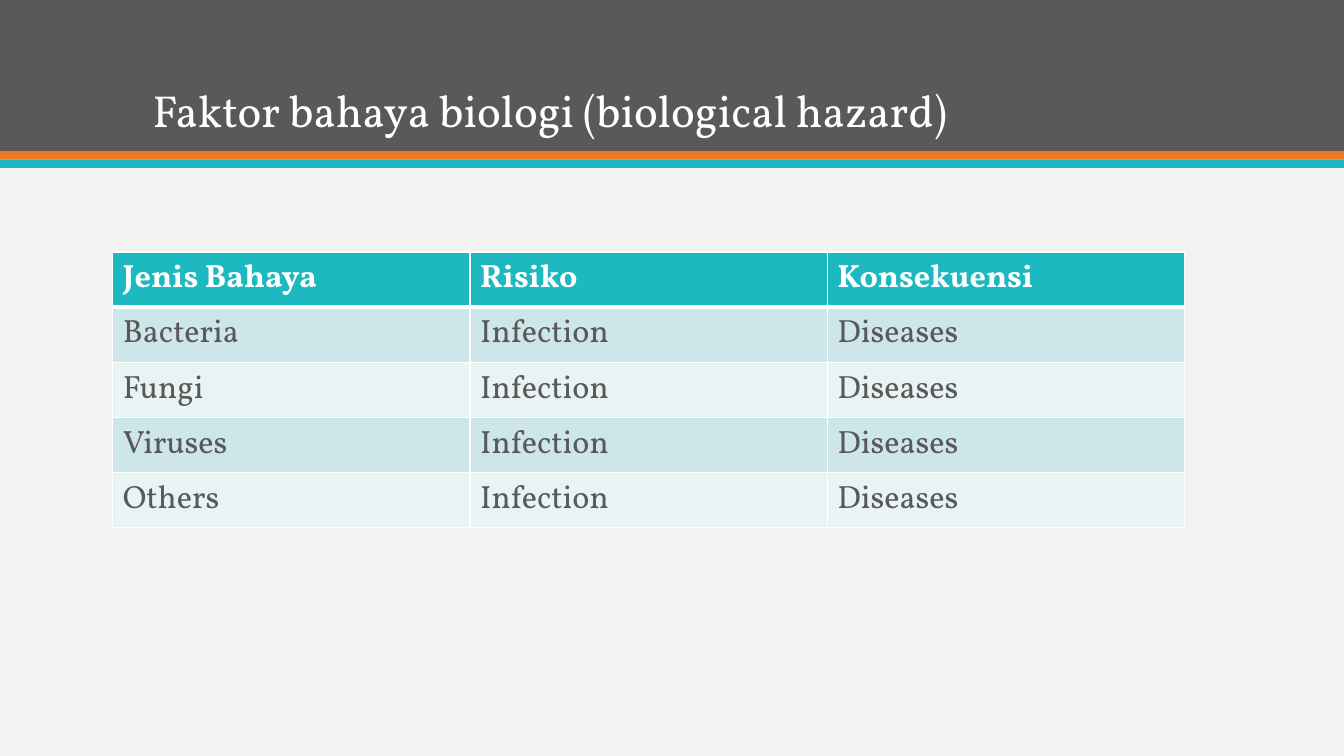
from dataclasses import dataclass

from lxml.etree import SubElement
from pptx import Presentation
from pptx.dml.color import RGBColor
from pptx.enum.shapes import MSO_SHAPE
from pptx.enum.text import MSO_ANCHOR
from pptx.oxml.ns import qn
from pptx.util import Pt


@dataclass(frozen=True)
class Theme:
    font: str = "Vollkorn"
    title_size: int = 32
    table_size: int = 23
    page: str = "F2F2F2"
    dark: str = "595959"
    orange: str = "EF7920"
    teal: str = "1EB8C1"
    white: str = "FFFFFF"
    bands: tuple = ("CDE6E9", "E8F3F4")


class Deck:
    """Builds slide elements in one theme, with lengths in points."""

    def __init__(self, theme, width, height):
        self.t = theme
        self.prs = Presentation()
        self.prs.slide_width, self.prs.slide_height = Pt(width), Pt(height)
        self.s = self.prs.slides.add_slide(self.prs.slide_layouts[6])
        self.fill(self.s.background, theme.page)

    def fill(self, target, color):
        target.fill.solid()
        target.fill.fore_color.rgb = RGBColor.from_string(color)

    def add_text(self, tf, text, size, color, bold=False):
        p = tf.paragraphs[0]
        r = p.add_run()
        r.text = text
        for key, value in {"name": self.t.font, "size": Pt(size), "bold": bold}.items():
            setattr(r.font, key, value)
        r.font.color.rgb = RGBColor.from_string(color)
        return p

    def band(self, top, height, color):
        sp = self.s.shapes.add_shape(
            MSO_SHAPE.RECTANGLE, 0, Pt(top), self.prs.slide_width, Pt(height))
        sp.shadow.inherit = False
        sp.line.fill.background()
        self.fill(sp, color)

    def title(self, box, text):
        tf = self.s.shapes.add_textbox(*map(Pt, box)).text_frame
        for key, value in {"word_wrap": True, "vertical_anchor": MSO_ANCHOR.BOTTOM}.items():
            setattr(tf, key, value)
        self.add_text(tf, text, self.t.title_size, self.t.white).line_spacing = 0.9

    def borders(self, cell, widths):
        tcPr = cell._tc.get_or_add_tcPr()
        for side, width in widths.items():
            ln = SubElement(tcPr, qn(f"a:ln{side}"), w=str(Pt(width)))
            SubElement(SubElement(ln, qn("a:solidFill")), qn("a:srgbClr"), val=self.t.white)

    def table(self, left, top, col_width, row_height, rows):
        n, m = len(rows), len(rows[0])
        table = self.s.shapes.add_table(
            n, m, Pt(left), Pt(top), Pt(col_width * m), Pt(row_height * n)).table
        for row in table.rows:
            row.height = Pt(row_height)
        for i, values in enumerate(rows):
            header = i == 0
            color = self.t.white if header else self.t.dark
            background = self.t.teal if header else self.t.bands[(i - 1) % 2]
            widths = {"L": 1, "R": 1, "T": 3 if i == 1 else 1, "B": 3 if header else 1}
            for j, text in enumerate(values):
                cell = table.cell(i, j)
                self.add_text(cell.text_frame, text, self.t.table_size, color, header)
                self.borders(cell, widths)
                self.fill(cell, background)


def main():
    theme = Theme()
    deck = Deck(theme, 960, 540)
    deck.band(0, 108, theme.dark)
    deck.band(108, 6, theme.orange)
    deck.band(114, 6, theme.teal)
    deck.title((102, 20, 756, 81.5), "Faktor bahaya biologi (biological hazard)")
    hazards = ["Bacteria", "Fungi", "Viruses", "Others"]
    deck.table(80.6, 180, 255.2, 39.4, [
        ["Jenis Bahaya", "Risiko", "Konsekuensi"],
        *([hazard, "Infection", "Diseases"] for hazard in hazards),
    ])
    deck.prs.save("out.pptx")


if __name__ == "__main__":
    main()
